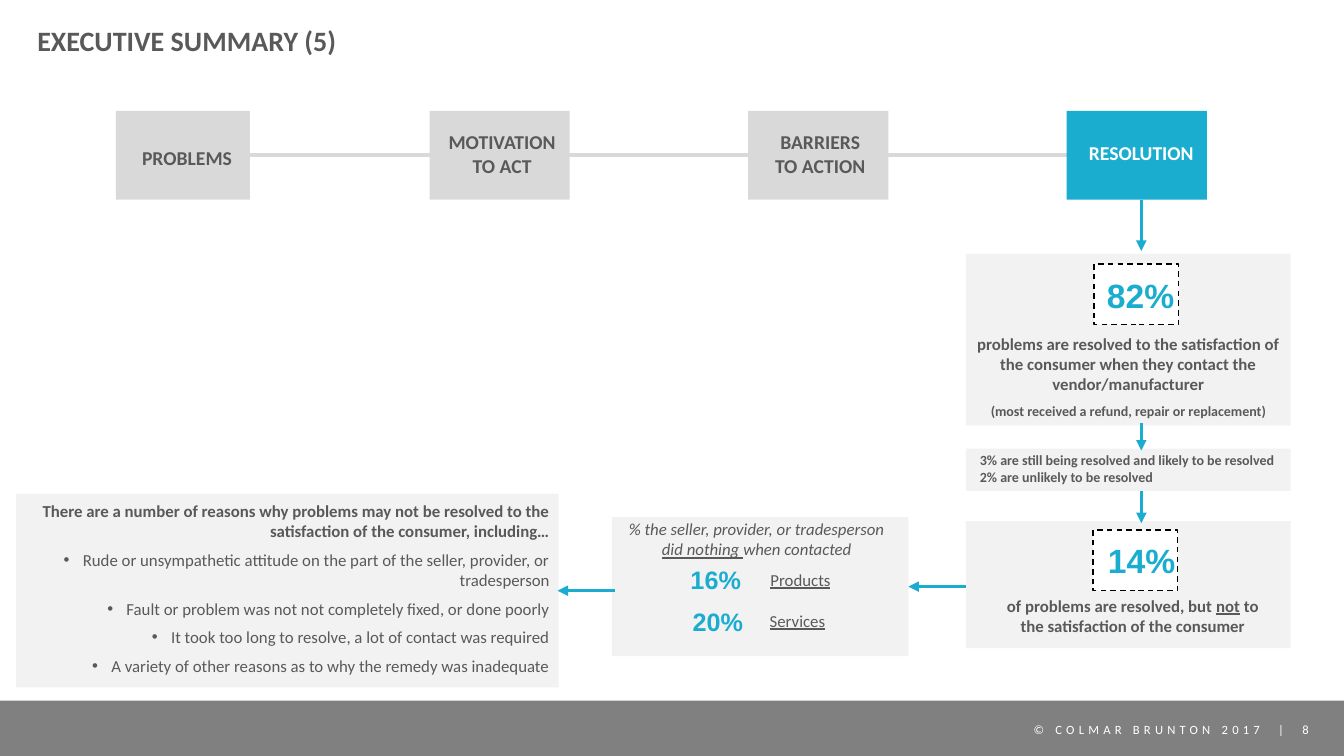
from lxml import etree
from pptx import Presentation
from pptx.dml.color import RGBColor
from pptx.enum.dml import MSO_LINE
from pptx.enum.shapes import MSO_CONNECTOR, MSO_SHAPE
from pptx.enum.text import MSO_ANCHOR, PP_ALIGN
from pptx.oxml.ns import qn
from pptx.util import Pt

PX = 9144  # 100 px to the inch
RECT, STRAIGHT, DASH = MSO_SHAPE.RECTANGLE, MSO_CONNECTOR.STRAIGHT, MSO_LINE.DASH
LEFT, CENTER, RIGHT = PP_ALIGN.LEFT, PP_ALIGN.CENTER, PP_ALIGN.RIGHT
TOP, MIDDLE = MSO_ANCHOR.TOP, MSO_ANCHOR.MIDDLE

WHITE = RGBColor(0xFF, 0xFF, 0xFF)
BLACK = RGBColor(0, 0, 0)
TEXT_GREY = RGBColor(0x59, 0x59, 0x59)
FOOTER_GREY = RGBColor(0x80, 0x80, 0x80)
STAGE_GREY = RGBColor(0xD9, 0xD9, 0xD9)
CARD_GREY = RGBColor(0xF2, 0xF2, 0xF2)
TEAL = RGBColor(0x1A, 0xAD, 0xD0)

prs = Presentation()
prs.slide_width, prs.slide_height = 1333 * PX, 750 * PX
slide = prs.slides.add_slide(prs.slide_layouts[6])
shapes = slide.shapes


def add_rect(box, fill, dashed=False):
    rect = shapes.add_shape(RECT, *(v * PX for v in box))
    rect.shadow.inherit = False
    rect.fill.solid()
    rect.fill.fore_color.rgb = fill
    if dashed:
        rect.line.color.rgb = BLACK
        rect.line.width = Pt(1)
        rect.line.dash_style = DASH
    else:
        rect.line.fill.background()


def add_text(box, paragraphs, size, color=TEXT_GREY, font="Calibri",
             align=CENTER, anchor=TOP, after=6, wrap=True):
    """Each paragraph is a list of (text, style) runs; style holds b, i or u."""
    frame = shapes.add_textbox(*(v * PX for v in box)).text_frame
    frame.word_wrap = wrap
    frame.vertical_anchor = anchor
    for index, runs in enumerate(paragraphs):
        paragraph = frame.paragraphs[0] if index == 0 else frame.add_paragraph()
        paragraph.alignment = align
        paragraph.space_after = Pt(after)
        for text, style in runs:
            run = paragraph.add_run()
            run.text = text
            run.font.name = font
            run.font.size = Pt(size)
            run.font.color.rgb = color
            run.font.bold = "b" in style
            run.font.italic = "i" in style
            run.font.underline = "u" in style
    return frame


# Footer and title
add_rect((0, 695, 1333, 55), FOOTER_GREY)
footer = add_text((979, 711, 365, 25), [[("© COLMAR BRUNTON 2017  |  8", "")]],
                  9, WHITE, after=0)
footer.paragraphs[0].runs[0].font._element.set("spc", "300")

title = add_text((37, 11, 1077, 62), [[("EXECUTIVE SUMMARY (5)", "b")]],
                 20, align=LEFT, anchor=MIDDLE, after=0)
title.margin_left = title.margin_right = title.margin_top = title.margin_bottom = 0
title.paragraphs[0].line_spacing = 0.9

# Cards
for card in [(16, 490, 538, 192), (607, 513, 294, 138), (958, 517, 322, 126),
             (958, 252, 322, 170), (958, 445, 322, 42)]:
    add_rect(card, CARD_GREY)

# Connecting line and arrows
connections = [
    ((248, 154, 1058, 154), STAGE_GREY),
    ((1132, 198, 1132, 249), TEAL),
    ((1132, 420, 1132, 447), TEAL),
    ((1132, 487, 1132, 519), TEAL),
    ((958, 582, 901, 582), TEAL),
    ((610, 586, 553, 586), TEAL),
]
for ends, color in connections:
    connector = shapes.add_connector(STRAIGHT, *(v * PX for v in ends))
    connector.line.color.rgb = color
    connector.line.width = Pt(2.5)
    if color == TEAL:
        line_xml = connector.line._get_or_add_ln()
        etree.SubElement(line_xml, qn("a:tailEnd"), type="triangle")
    etree.SubElement(connector._element.spPr, qn("a:effectLst"))

# Stages
stages = [
    ("PROBLEMS", 115, 133, (117, 140, 125, 34), STAGE_GREY, TEXT_GREY),
    ("MOTIVATION TO ACT", 426, 139, (411, 124, 162, 57), STAGE_GREY, TEXT_GREY),
    ("BARRIERS TO ACTION", 742, 139, (745, 124, 125, 57), STAGE_GREY, TEXT_GREY),
    ("RESOLUTION", 1058, 139, (1050, 135, 152, 34), TEAL, WHITE),
]
for label, left, width, label_box, fill, color in stages:
    add_rect((left, 110, width, 88), fill)
    stage = add_text(label_box, [[(label, "b")]], 14, color)
    stage.paragraphs[0]._p.get_or_add_pPr().set("marL", str(12 * PX))

# Percentages
for frame_box in [(1085, 262, 84, 60), (1084, 526, 84, 60)]:
    add_rect(frame_box, WHITE, dashed=True)
for percentage, box, size in [("82%", (1088, 268, 88, 50), 24),
                              ("14%", (1089, 531, 88, 50), 24),
                              ("16%", (675, 555, 71, 40), 18),
                              ("20%", (677, 597, 71, 40), 18)]:
    add_text(box, [[(percentage, "b")]], size, TEAL, "Arial", LEFT, after=0, wrap=False)

# Resolution outcomes
resolved = add_text((958, 326, 322, 96), [
    [("problems are resolved to the satisfaction of the consumer when they "
      "contact the vendor/manufacturer", "b")],
    [("(most received a refund, repair or replacement)", "b")],
], 12)
resolved.paragraphs[1].runs[0].font.size = Pt(10)
add_text((962, 443, 322, 44), [
    [("3% are still being resolved and likely to be resolved "
      "2% are unlikely to be resolved", "b")],
], 10, align=LEFT)
add_text((988, 586, 271, 50), [
    [("of problems are resolved, but ", "b"), ("not", "bu"),
     (" to the satisfaction of the consumer", "b")],
], 12)

# Sellers who did nothing
add_text((607, 510, 287, 50), [
    [("% the seller, provider, or tradesperson ", "i"), ("did nothing ", "iu"),
     ("when contacted", "i")],
], 12)
for kind, left, top in [("Products", 749, 560), ("Services", 746, 601)]:
    add_text((left, top, 90, 30), [[(kind, "u")]], 12)

# Reasons
reasons = add_text((30, 492, 525, 214), [
    [("There are a number of reasons why problems may not be resolved to the "
      "satisfaction of the consumer, including…", "b")],
    [("Rude or unsympathetic attitude on the part of the seller, provider, "
      "or tradesperson", "")],
    [("Fault or problem was not not completely fixed, or done poorly", "")],
    [("It took too long to resolve, a lot of contact was required", "")],
    [("A variety of other reasons as to why the remedy was inadequate", "")],
], 12, align=RIGHT)
for reason in reasons.paragraphs[1:]:
    properties = reason._p.get_or_add_pPr()
    properties.set("marL", str(19 * PX))
    properties.set("indent", str(-19 * PX))
    etree.SubElement(properties, qn("a:buFont"), typeface="Arial")
    etree.SubElement(properties, qn("a:buChar"), char="•")

prs.save("out.pptx")
